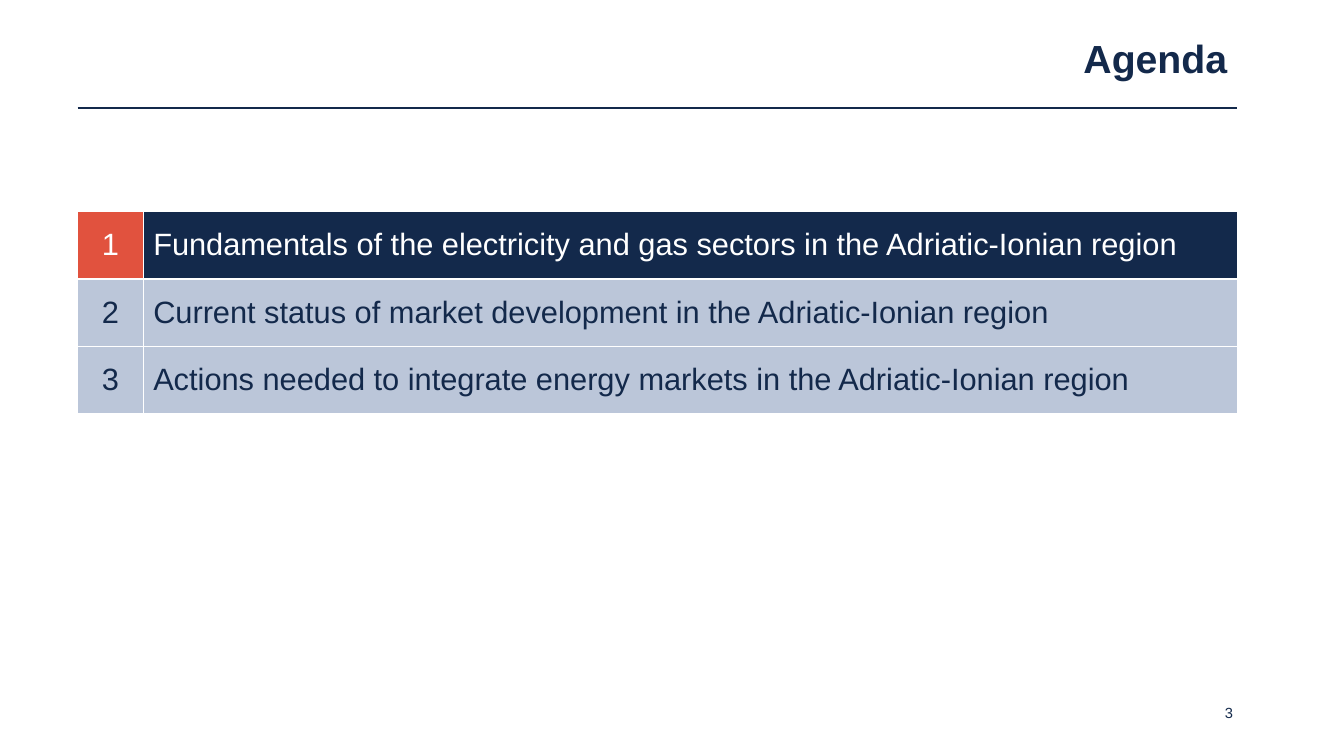
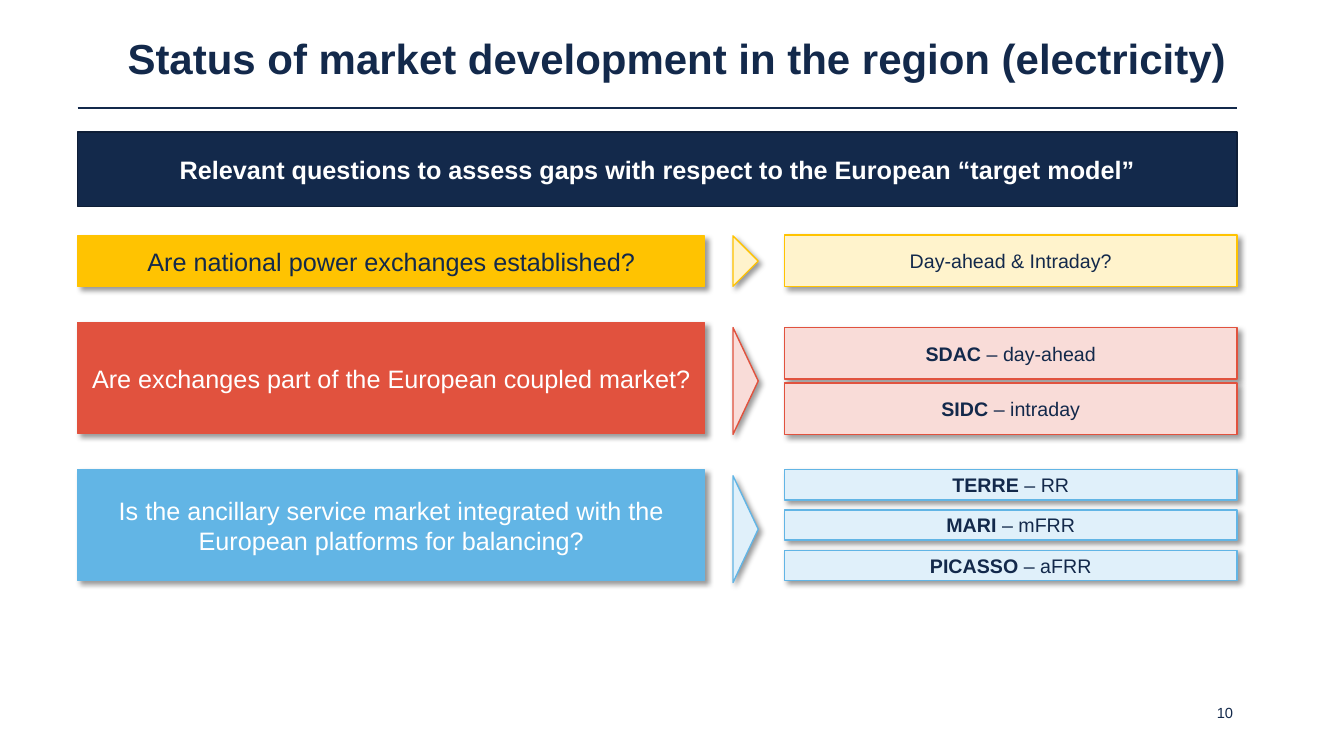
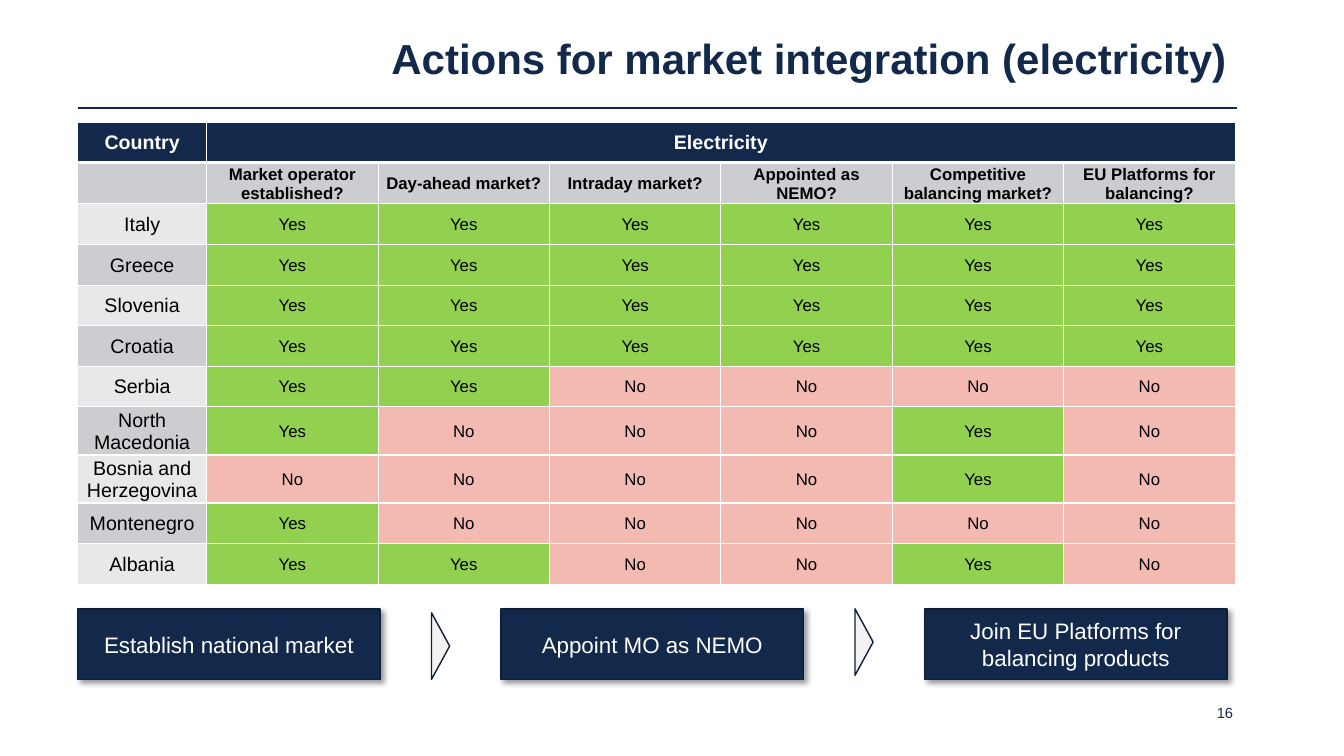
from collections import namedtuple

from lxml.etree import SubElement
from pptx import Presentation
from pptx.dml.color import RGBColor as RGB
from pptx.enum.shapes import MSO_CONNECTOR, MSO_SHAPE as SHAPE
from pptx.enum.text import MSO_ANCHOR as ANCHOR, PP_ALIGN as ALIGN
from pptx.oxml.ns import qn
from pptx.util import Inches, Pt

FONT = "Arial"
NAVY = RGB(0x13, 0x29, 0x4B)
DARK_NAVY = RGB(0x0E, 0x1E, 0x37)
WHITE = RGB(0xFF, 0xFF, 0xFF)
BLACK = RGB(0x00, 0x00, 0x00)
RED = RGB(0xE1, 0x52, 0x3E)
PALE_RED = RGB(0xF9, 0xDC, 0xD8)
YELLOW = RGB(0xFF, 0xC3, 0x01)
PALE_YELLOW = RGB(0xFF, 0xF3, 0xCC)
BLUE = RGB(0x62, 0xB5, 0xE5)
PALE_BLUE = RGB(0xE0, 0xF0, 0xFA)
STEEL = RGB(0xBB, 0xC6, 0xD9)
GREY = RGB(0xCC, 0xCD, 0xD0)
PALE_GREY = RGB(0xE7, 0xE8, 0xE9)
OFF_WHITE = RGB(0xF2, 0xF2, 0xF2)
GREEN = RGB(0x92, 0xD0, 0x50)
PINK = RGB(0xF3, 0xBA, 0xB2)

Box = namedtuple("Box", "x y w h")
Theme = namedtuple("Theme", "strong pale text")
Topic = namedtuple("Topic", "question theme box arrow answers first_answer pitch")

LEFT, WIDTH = 0.77, 11.5
TITLE = Box(LEFT, 0.29, WIDTH, 0.62)
RULE_Y = 1.07
NUMBER = Box(9.27, 6.93, 3, 0.3)

AGENDA = [
    "Fundamentals of the electricity and gas sectors in the Adriatic-Ionian region",
    "Current status of market development in the Adriatic-Ionian region",
    "Actions needed to integrate energy markets in the Adriatic-Ionian region",
]

ANSWER_X, ANSWER_W = 7.78, 4.49
TOPICS = [
    Topic("Are national power exchanges established?",
          Theme(YELLOW, PALE_YELLOW, NAVY),
          Box(LEFT, 2.34, 6.22, 0.5), Box(7.27, 2.34, 0.25, 0.5),
          [("", "Day-ahead & Intraday?")],
          Box(ANSWER_X, 2.33, ANSWER_W, 0.51), 0),
    Topic("Are exchanges part of the European coupled market?",
          Theme(RED, PALE_RED, WHITE),
          Box(LEFT, 3.2, 6.22, 1.1), Box(7.27, 3.25, 0.25, 1.06),
          [("SDAC", " – day-ahead"), ("SIDC", " – intraday")],
          Box(ANSWER_X, 3.25, ANSWER_W, 0.51), 0.55),
    Topic("Is the ancillary service market integrated with the European platforms for balancing?",
          Theme(BLUE, PALE_BLUE, WHITE),
          Box(LEFT, 4.66, 6.22, 1.1), Box(7.27, 4.72, 0.25, 1.06),
          [("TERRE", " – RR"), ("MARI", " – mFRR"), ("PICASSO", " – aFRR")],
          Box(ANSWER_X, 4.66, ANSWER_W, 0.3), 0.4),
]

CRITERIA = ["Market operator established?", "Day-ahead market?", "Intraday market?",
            "Appointed as NEMO?", "Competitive balancing market?",
            "EU Platforms for balancing?"]
COUNTRIES = {
    "Italy": "YYYYYY",
    "Greece": "YYYYYY",
    "Slovenia": "YYYYYY",
    "Croatia": "YYYYYY",
    "Serbia": "YYNNNN",
    "North Macedonia": "YNNNYN",
    "Bosnia and Herzegovina": "NNNNYN",
    "Montenegro": "YNNNNN",
    "Albania": "YYNNYN",
}
VERDICTS = {"Y": ("Yes", GREEN), "N": ("No", PINK)}
STEPS = ["Establish national market", "Appoint MO as NEMO",
         "Join EU Platforms for balancing products"]


def inches(box):
    return [Inches(v) for v in box]


def style(r, size, color, bold=False):
    r.font.name, r.font.size, r.font.bold = FONT, Pt(size), bold
    r.font.color.rgb = color


def write(tf, text, size, color, bold=False, align=ALIGN.CENTER):
    p = tf.paragraphs[0]
    p.text = text
    p.alignment = align
    for r in p.runs:
        style(r, size, color, bold)
    return p


def add_shadow(sp):
    effects = SubElement(sp.element.spPr, qn("a:effectLst"))
    outer = SubElement(effects, qn("a:outerShdw"), blurRad=str(Pt(4)), dist=str(Pt(3)),
                       dir="2700000", algn="tl", rotWithShape="0")
    color = SubElement(outer, qn("a:srgbClr"), val="000000")
    SubElement(color, qn("a:alpha"), val="40000")


def add_box(s, box, fill, line, kind=SHAPE.RECTANGLE, shadow=True):
    sp = s.shapes.add_shape(kind, *inches(box))
    sp.fill.solid()
    sp.fill.fore_color.rgb = fill
    sp.line.color.rgb = line
    sp.line.width = Pt(1)
    if shadow:
        add_shadow(sp)
    else:
        sp.shadow.inherit = False
    sp.text_frame.word_wrap = True
    sp.text_frame.vertical_anchor = ANCHOR.MIDDLE
    return sp


def add_arrow(s, box, fill, line, shadow=True):
    turned = Box(box.x + (box.w - box.h) / 2, box.y + (box.h - box.w) / 2, box.h, box.w)
    sp = add_box(s, turned, fill, line, SHAPE.ISOSCELES_TRIANGLE, shadow)
    sp.rotation = 90


def set_borders(cell, top=1, bottom=1):
    tcPr = cell._tc.get_or_add_tcPr()
    for side, width in (("lnL", 1), ("lnR", 1), ("lnT", top), ("lnB", bottom)):
        ln = SubElement(tcPr, qn("a:" + side), w=str(Pt(width)))
        SubElement(SubElement(ln, qn("a:solidFill")), qn("a:srgbClr"), val="FFFFFF")


def fill_cell(cell, fill, margins, top=1, bottom=1):
    set_borders(cell, top, bottom)
    cell.fill.solid()
    cell.fill.fore_color.rgb = fill
    cell.vertical_anchor = ANCHOR.MIDDLE
    (cell.margin_left, cell.margin_top,
     cell.margin_right, cell.margin_bottom) = inches(margins)


def add_grid(s, x, y, widths, rows, row_height):
    frame = s.shapes.add_table(rows, len(widths), Inches(x), Inches(y),
                               Inches(sum(widths)), row_height * rows)
    table = frame.table
    table.first_row = table.horz_banding = False
    for column, width in zip(table.columns, widths):
        column.width = Inches(width)
    for row in table.rows:
        row.height = row_height
    return table


def prepare_layout(prs):
    layout = prs.slide_layouts[5]
    title = layout.placeholders[0]
    title.left, title.top, title.width, title.height = inches(TITLE)
    title.text_frame.vertical_anchor = ANCHOR.MIDDLE
    return layout


def add_rule(s):
    rule = s.shapes.add_connector(MSO_CONNECTOR.STRAIGHT, Inches(LEFT), Inches(RULE_Y),
                                  Inches(LEFT + WIDTH), Inches(RULE_Y))
    rule.line.color.rgb = NAVY
    rule.line.width = Pt(1.5)
    SubElement(rule.element.spPr, qn("a:effectLst"))


def add_slide(prs, layout, title, number, size=30):
    s = prs.slides.add_slide(layout)
    add_rule(s)
    p = write(s.shapes.title.text_frame, title, size, NAVY, True, ALIGN.RIGHT)
    p.line_spacing = 0.9
    tf = s.shapes.add_textbox(*inches(NUMBER)).text_frame
    tf.word_wrap = True
    tf.margin_right = Inches(0.04)
    write(tf, str(number), 10.5, NAVY, align=ALIGN.RIGHT)
    return s


def add_agenda(s, x, y, current):
    table = add_grid(s, x, y, [0.65, WIDTH - 0.65], len(AGENDA), Inches(0.64))
    for i, topic in enumerate(AGENDA):
        active = i == current
        fills = (RED, NAVY) if active else (STEEL, STEEL)
        texts = (str(i + 1), topic)
        for j, align in enumerate((ALIGN.CENTER, ALIGN.LEFT)):
            cell = table.cell(i, j)
            fill_cell(cell, fills[j], (0.1, 0.15, 0.1, 0.15))
            write(cell.text_frame, texts[j], 22, WHITE if active else NAVY, align=align)


def add_topic(s, topic):
    theme = topic.theme
    sp = add_box(s, topic.box, theme.strong, theme.strong)
    write(sp.text_frame, topic.question, 18, theme.text)
    add_arrow(s, topic.arrow, theme.pale, theme.strong)
    first = topic.first_answer
    for i, (name, detail) in enumerate(topic.answers):
        sp = add_box(s, first._replace(y=first.y + i * topic.pitch), theme.pale, theme.strong)
        p = write(sp.text_frame, name, 14, NAVY, True)
        r = p.add_run()
        r.text = detail
        style(r, 14, NAVY)


def add_country_table(s, x, y):
    columns = len(CRITERIA)
    table = add_grid(s, x, y, [1.28] + [1.7] * columns, len(COUNTRIES) + 2, Pt(29))
    tight = (0.01, 0.01, 0.01, 0)
    for j in range(columns + 1):
        fill_cell(table.cell(0, j), NAVY, (0.1, 0.05, 0.1, 0.05), bottom=3)
        fill_cell(table.cell(1, j), GREY, tight, top=3)
    table.cell(0, 1).merge(table.cell(0, columns))
    for j, head in enumerate(("Country", "Electricity")):
        write(table.cell(0, j).text_frame, head, 14, WHITE, True)
    for j, criterion in enumerate(CRITERIA, 1):
        write(table.cell(1, j).text_frame, criterion, 12, BLACK, True)
    for i, (country, answers) in enumerate(COUNTRIES.items(), 2):
        cell = table.cell(i, 0)
        fill_cell(cell, GREY if i % 2 else PALE_GREY, tight)
        write(cell.text_frame, country, 14, BLACK)
        for j, answer in enumerate(answers, 1):
            verdict, fill = VERDICTS[answer]
            cell = table.cell(i, j)
            fill_cell(cell, fill, tight)
            write(cell.text_frame, verdict, 12, BLACK)


def add_steps(s, first, pitch):
    for i, step in enumerate(STEPS):
        box = first._replace(x=first.x + i * pitch)
        sp = add_box(s, box, NAVY, DARK_NAVY)
        write(sp.text_frame, step, 16, WHITE)
    for i, drop in enumerate((0.04, 0)):
        arrow = Box(first.x + i * pitch + 3.51, first.y + drop, 0.18, 0.66)
        add_arrow(s, arrow, OFF_WHITE, DARK_NAVY, shadow=False)


def main():
    prs = Presentation()
    prs.slide_width, prs.slide_height = Inches(13.33), Inches(7.5)
    layout = prepare_layout(prs)

    s = add_slide(prs, layout, "Agenda", 3, 28)
    add_agenda(s, LEFT, 2.1, current=0)

    s = add_slide(prs, layout, "Status of market development in the region (electricity)", 10)
    banner = add_box(s, Box(LEFT, 1.31, WIDTH, 0.74), NAVY, DARK_NAVY, shadow=False)
    write(banner.text_frame,
          "Relevant questions to assess gaps with respect to the European “target model”",
          18, WHITE, True)
    for topic in TOPICS:
        add_topic(s, topic)

    s = add_slide(prs, layout, "Actions for market integration (electricity)", 16)
    add_country_table(s, LEFT, 1.21)
    add_steps(s, Box(LEFT, 6.04, 3, 0.7), 4.2)

    prs.save("out.pptx")


if __name__ == "__main__":
    main()
